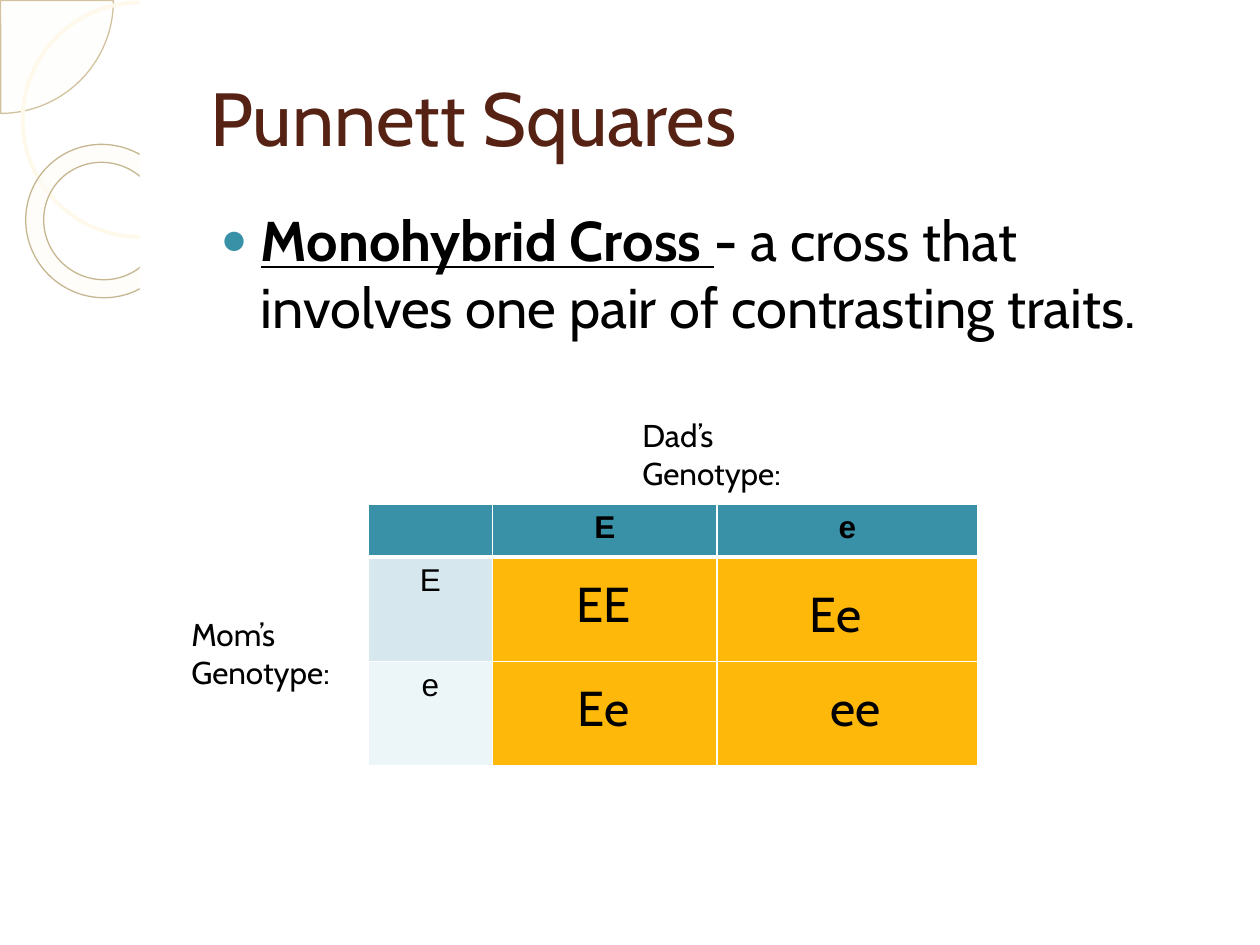
from lxml.etree import SubElement
from pptx import Presentation
from pptx.dml.color import RGBColor
from pptx.enum.shapes import MSO_SHAPE
from pptx.enum.text import MSO_ANCHOR, MSO_AUTO_SIZE, PP_ALIGN
from pptx.oxml.ns import qn
from pptx.util import Inches, Pt

BLACK = RGBColor(0x00, 0x00, 0x00)
WHITE = RGBColor(0xFF, 0xFF, 0xFF)
BROWN = RGBColor(0x56, 0x22, 0x14)
TEAL = RGBColor(0x38, 0x91, 0xA7)
GOLD = RGBColor(0xFE, 0xB8, 0x0A)
MIST = RGBColor(0xD6, 0xE8, 0xED)
PALE = RGBColor(0xEC, 0xF5, 0xF7)
IVORY = RGBColor(0xFE, 0xFC, 0xF8)
CREAM = RGBColor(0xFF, 0xF9, 0xEB)
SAND = RGBColor(0xD2, 0xC2, 0x9E)
KHAKI = RGBColor(0xC6, 0xB7, 0x91)


def place(shape, box):
    shape.left, shape.top, shape.width, shape.height = map(Inches, box)


def add_run(para, text, size, color=BLACK, font="Cabin", bold=False, under=False):
    run = para.add_run()
    run.text = text
    face = run.font
    face.name, face.size, face.bold, face.underline = font, Pt(size), bold, under
    face.color.rgb = color


def add_deco(slide, kind, box, fill=None, alpha=100, line=None, width=0.75):
    shape = slide.shapes.add_shape(kind, *map(Inches, box))
    shape.shadow.inherit = False
    if fill is None:
        shape.fill.background()
    else:
        shape.fill.solid()
        shape.fill.fore_color.rgb = fill
        if alpha < 100:
            tone = shape._element.spPr.find(".//" + qn("a:srgbClr"))
            SubElement(tone, qn("a:alpha"), val=str(alpha * 1000))
    if line is None:
        shape.line.fill.background()
    else:
        shape.line.color.rgb = line
        shape.line.width = Pt(width)
    return shape


def add_side(slide):
    """Draw the curved ornaments, cut off on the right by the white page panel."""
    pie = add_deco(slide, MSO_SHAPE.PIE, (-0.89, -0.89, 1.79, 1.79), IVORY, 33, SAND)
    pie.adjustments[0], pie.adjustments[1] = 0, 54
    add_deco(slide, MSO_SHAPE.OVAL, (0.18, 0.02, 1.86, 1.86), line=CREAM, width=2.15)
    ring = add_deco(slide, MSO_SHAPE.DONUT, (0.2, 1.15, 1.23, 1.21), IVORY, 60, KHAKI)
    ring.adjustments[0] = 0.118
    ring.rotation = 38.6
    for width in (8.89, 0.08):
        add_deco(slide, MSO_SHAPE.RECTANGLE, (1.11, 0, width, 7.5), WHITE)


def set_title(slide, text):
    title = slide.shapes.title
    place(title, (1.57, 0.3, 8.2, 1.25))
    frame = title.text_frame
    frame.auto_size = MSO_AUTO_SIZE.NONE
    frame.vertical_anchor = MSO_ANCHOR.MIDDLE
    para = frame.paragraphs[0]
    para.alignment = PP_ALIGN.LEFT
    add_run(para, text, 43, BROWN)


def set_body(slide):
    body = slide.placeholders[1]
    place(body, (1.57, 1.58, 8.2, 5.25))
    body.text_frame.auto_size = MSO_AUTO_SIZE.NONE
    para = body.text_frame.paragraphs[0]
    para.space_before = Pt(0)
    add_bullet(para)
    add_run(para, "Monohybrid Cross ", 32, bold=True, under=True)
    add_run(para, "- ", 32, bold=True)
    add_run(para, "a cross that involves one pair of contrasting traits.", 32)


def add_bullet(para):
    props = para._p.get_or_add_pPr()
    props.set("marL", str(Inches(0.4)))
    props.set("indent", str(Inches(-0.32)))
    tone = SubElement(props, qn("a:buClr"))
    SubElement(tone, qn("a:srgbClr"), val=str(TEAL))
    SubElement(props, qn("a:buSzPct"), val="80000")
    SubElement(props, qn("a:buFont"), typeface="Arial")
    SubElement(props, qn("a:buChar"), char="●")


def set_edges(cell, base):
    """Give a cell white borders; base is the width of the bottom one."""
    props = cell._tc.get_or_add_tcPr()
    for side, width in (("L", 1), ("R", 1), ("T", 1), ("B", base)):
        edge = SubElement(props, qn("a:ln" + side), w=str(Pt(width)))
        fill = SubElement(edge, qn("a:solidFill"))
        SubElement(fill, qn("a:srgbClr"), val=str(WHITE))


def add_square(slide):
    """Add the Punnett grid with the parents' alleles along its top and left."""
    box = map(Inches, (2.92, 4, 4.84, 2.08))
    table = slide.shapes.add_table(3, 3, *box).table
    for col, width in zip(table.columns, (0.99, 1.78, 2.07)):
        col.width = Inches(width)
    for row, height in zip(table.rows, (0.42, 0.83, 0.83)):
        row.height = Inches(height)
    marks = (("", "E", "e"), ("E", "", ""), ("e", "", ""))
    fills = ((TEAL, TEAL, TEAL), (MIST, GOLD, GOLD), (PALE, GOLD, GOLD))
    for r in range(3):
        for c in range(3):
            cell = table.cell(r, c)
            set_edges(cell, 3 if r == 0 else 1)
            cell.fill.solid()
            cell.fill.fore_color.rgb = fills[r][c]
            if marks[r][c]:
                para = cell.text_frame.paragraphs[0]
                para.alignment = PP_ALIGN.CENTER
                add_run(para, marks[r][c], 18, font="Arial", bold=r == 0)


def add_label(slide, text, box, size, align=PP_ALIGN.LEFT):
    frame = slide.shapes.add_textbox(*map(Inches, box)).text_frame
    frame.word_wrap = True
    para = frame.paragraphs[0]
    para.alignment = align
    add_run(para, text, size)


def main():
    deck = Presentation()
    deck.slide_width, deck.slide_height = Inches(10), Inches(7.5)
    slide = deck.slides.add_slide(deck.slide_layouts[1])
    add_side(slide)
    # Placeholders come first in a new slide: lift them above the panel.
    for holder in list(slide.placeholders):
        slide.shapes._spTree.append(holder._element)
    set_title(slide, "Punnett Squares")
    set_body(slide)
    add_square(slide)
    for text, x, y in (("Mom’s Genotype:", 1.42, 4.83), ("Dad’s Genotype:", 5, 3.25)):
        add_label(slide, text, (x, y, 1.5, 0.71), 18)
    pairs = (("EE", 4.08, 4.5), ("Ee", 5.92, 4.58), ("Ee", 4.08, 5.33), ("ee", 6.08, 5.33))
    for text, x, y in pairs:
        add_label(slide, text, (x, y, 1.42, 0.57), 28, PP_ALIGN.CENTER)
    deck.save("out.pptx")


if __name__ == "__main__":
    main()
